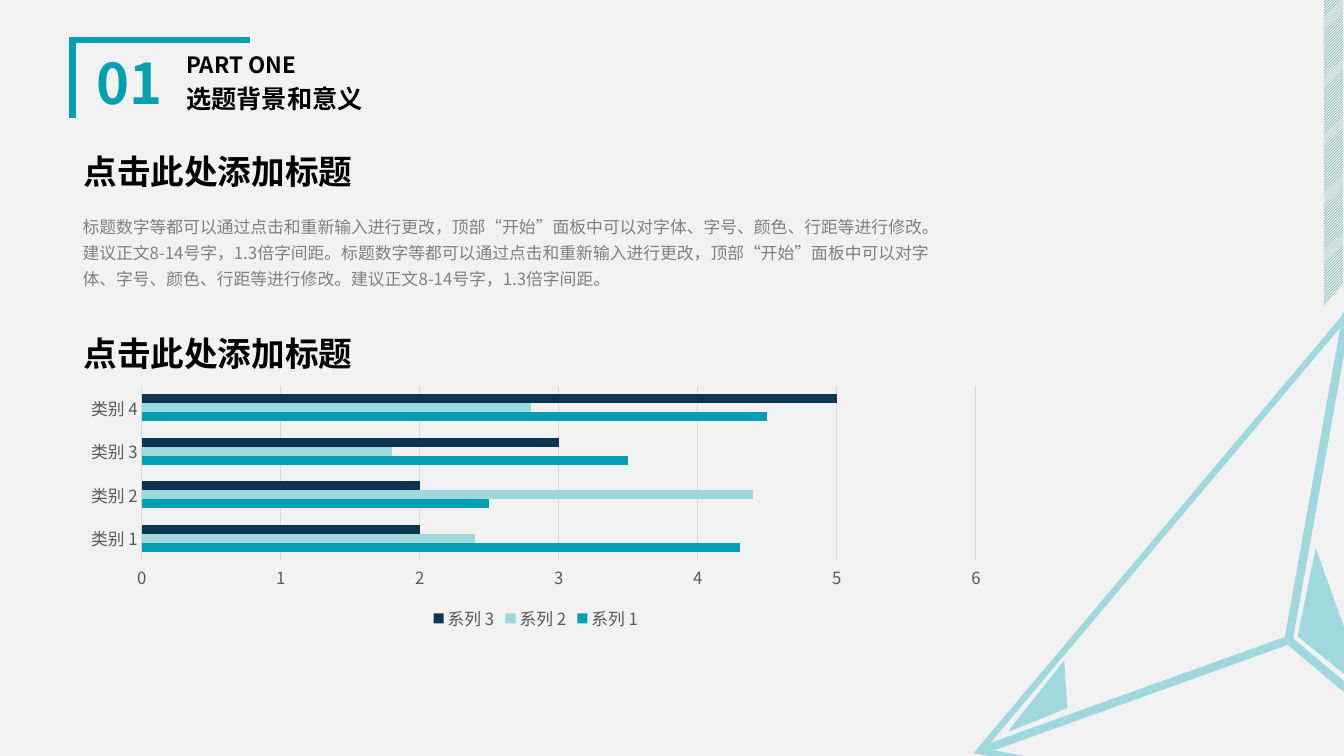
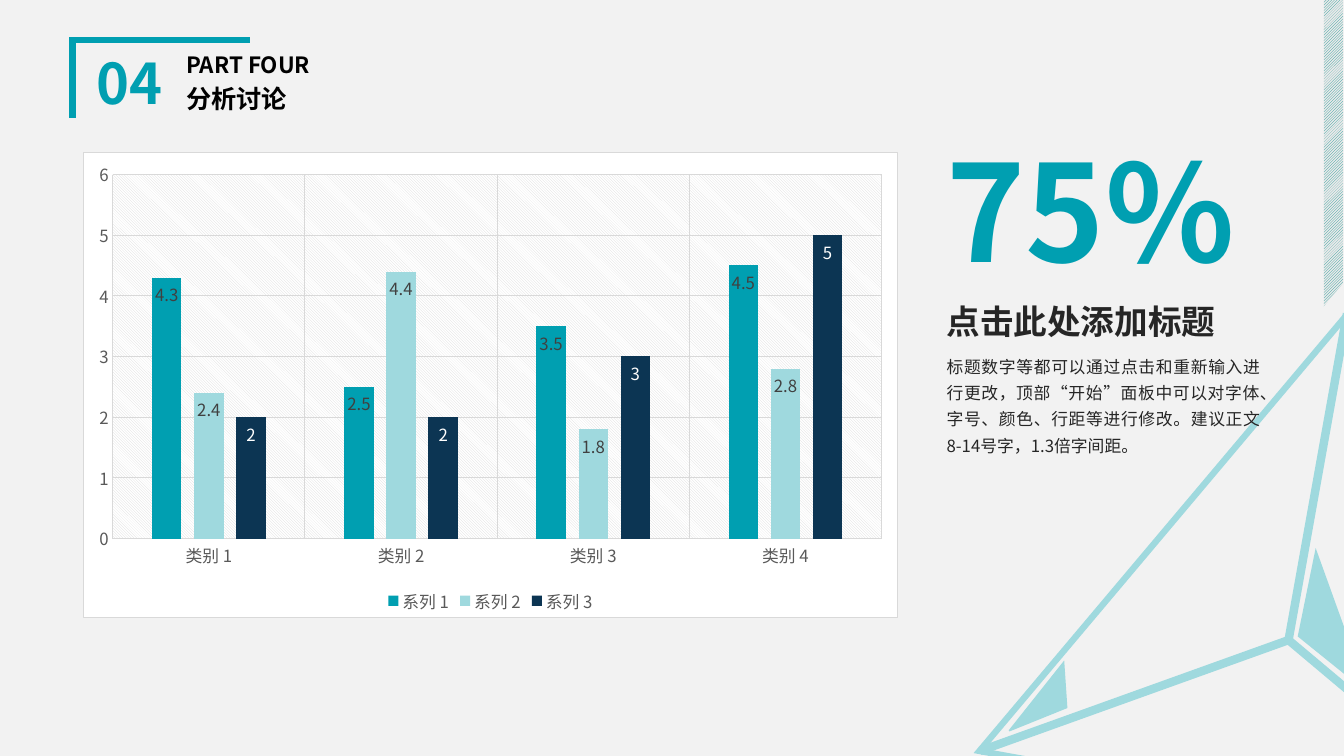
from lxml.etree import SubElement
from pptx import Presentation
from pptx.chart.data import CategoryChartData as Data
from pptx.dml.color import RGBColor
from pptx.dml.fill import FillFormat
from pptx.dml.line import LineFormat
from pptx.enum.chart import XL_CHART_TYPE as Kind
from pptx.enum.chart import XL_LABEL_POSITION as Spot
from pptx.enum.chart import XL_LEGEND_POSITION as Side
from pptx.enum.chart import XL_TICK_MARK as Tick
from pptx.enum.dml import MSO_PATTERN as Hatch
from pptx.enum.shapes import MSO_CONNECTOR as Link
from pptx.enum.shapes import MSO_SHAPE as Form
from pptx.enum.text import MSO_ANCHOR as Anchor
from pptx.enum.text import PP_ALIGN as Align
from pptx.oxml.ns import qn
from pptx.oxml.xmlchemy import OxmlElement
from pptx.util import Pt

PX = 9144
FACE = "Noto Sans CJK SC"
TEAL, PALE, NAVY = "009FB1", "9FD9DE", "0C3553"
PAPER, WHITE, BLACK, INK = "F2F2F2", "FFFFFF", "000000", "262626"
GREY, LABEL, TEXT, RULE = "808080", "404040", "595959", "D9D9D9"
TILT = 250.2
HEAD = "点击此处添加标题"
BODY = ("标题数字等都可以通过点击和重新输入进行更改，顶部“开始”面板中可以对"
        "字体、字号、颜色、行距等进行修改。建议正文8-14号字，1.3倍字间距。")
CATS = [f"类别 {n}" for n in range(1, 5)]
ROWS = [
    ("系列 1", (4.3, 2.5, 3.5, 4.5), TEAL, LABEL),
    ("系列 2", (2.4, 4.4, 1.8, 2.8), PALE, LABEL),
    ("系列 3", (2, 2, 3, 5), NAVY, WHITE),
]


def hue(code):
    """Turn a hex string into a colour."""
    return RGBColor.from_string(code)


def emu(*vals):
    """Turn px lengths into EMU."""
    return [v * PX for v in vals]


def put(obj, **vals):
    """Set each named value on the object."""
    for key, val in vals.items():
        setattr(obj, key, val)


def tint(fill, code):
    """Give a fill one solid colour, or none."""
    if code:
        fill.solid()
        fill.fore_color.rgb = hue(code)
    else:
        fill.background()


def weave(fill, kind, fore, back):
    """Give a fill a hatch of two colours."""
    fill.patterned()
    fill.pattern = kind
    fill.fore_color.rgb = hue(fore)
    fill.back_color.rgb = hue(back)


def stroke(line, code, width=0.75):
    """Give a line its colour and width."""
    tint(line.fill, code)
    if code:
        line.width = Pt(width)


def style(font, size, code, bold=False):
    """Give a font the shared face for both scripts."""
    put(font, name=FACE, size=Pt(size), bold=bold)
    font.color.rgb = hue(code)
    SubElement(font._rPr, qn("a:ea")).set("typeface", FACE)


class Deck:
    """Hold the style and the current slide."""

    def __init__(self):
        """Start a wide deck."""
        self.prs = Presentation()
        put(self.prs, slide_width=1333 * PX, slide_height=750 * PX)
        self.slide = None

    def page(self, num, part, name):
        """Add a slide with its frame and section title."""
        self.slide = self.prs.slides.add_slide(self.prs.slide_layouts[6])
        tint(self.slide.background.fill, PAPER)
        self.frame()
        mid = {"anchor": Anchor.MIDDLE, "bold": True, "gap": 0.9}
        self.text((82, 49, 93, 73), num, 40, TEAL, align=Align.CENTER, **mid)
        self.text((175, 49, 267, 34), part, 16, BLACK, **mid)
        self.text((175, 78, 267, 44), name, 18, BLACK, **mid)

    def frame(self):
        """Draw the hatched band, corner bracket and paper plane."""
        band = self.shape(Form.RECTANGLE, (1313, 0, 19, 750), None)
        weave(band.fill, Hatch.LIGHT_UPWARD_DIAGONAL, "1A9895", "E9E9E9")
        self.free([(72, 117), (72, 40), (248, 40)], None, TEAL, 4.5, False)
        peak = Form.ISOSCELES_TRIANGLE
        self.shape(peak, (865, 386, 653, 563), PAPER, turn=TILT)
        self.shape(peak, (918, 417, 568, 490), PAPER, PALE, 4.5, TILT)
        hub = (1278, 635)
        for tip in ((972, 745), (1529, 846), (1336, 311)):
            self.line(tip, hub, PALE, 6)
        self.shape(peak, (1235, 601, 148, 45), PALE, PALE, 1, TILT)
        self.free([(1058, 702), (1055, 657), (1001, 725)], PALE, PALE, 1)

    def paint(self, item, fill, edge, width):
        """Set fill, outline and sharp corners."""
        item.shadow.inherit = False
        tint(item.fill, fill)
        stroke(item.line, edge, width)
        if edge:
            SubElement(item.line._get_or_add_ln(), qn("a:miter")).set("lim", "800000")
        return item

    def shape(self, kind, box, fill, edge=None, width=1, turn=0):
        """Add a preset shape."""
        item = self.slide.shapes.add_shape(kind, *emu(*box))
        item.rotation = turn
        return self.paint(item, fill, edge, width)

    def free(self, pts, fill, edge, width, close=True):
        """Add an outline through the points."""
        pen = self.slide.shapes.build_freeform(*pts[0], scale=PX)
        pen.add_line_segments(pts[1:], close=close)
        return self.paint(pen.convert_to_shape(), fill, edge, width)

    def line(self, start, end, code, width):
        """Add a straight line."""
        item = self.slide.shapes.add_connector(Link.STRAIGHT, *emu(*start, *end))
        stroke(item.line, code, width)
        SubElement(item._element.spPr, qn("a:effectLst"))

    def text(self, box, words, size, code, bold=False, gap=None,
             align=Align.LEFT, anchor=Anchor.TOP, wrap=True):
        """Add a text box."""
        frame = self.slide.shapes.add_textbox(*emu(*box)).text_frame
        put(frame, word_wrap=wrap, vertical_anchor=anchor)
        para = frame.paragraphs[0]
        put(para, alignment=align, line_spacing=gap)
        run = para.add_run()
        run.text = words
        style(run.font, size, code, bold)

    def chart(self, kind, box, gap, lap, full=False):
        """Add a chart of the shared rows, full with panel and labels."""
        data = Data()
        data.categories = CATS
        for name, vals, *_ in ROWS:
            data.add_series(name, vals)
        chart = self.slide.shapes.add_chart(kind, *emu(*box), data).chart
        put(chart, has_title=False, has_legend=True)
        style(chart.font, 12, TEXT)
        put(chart.legend, position=Side.BOTTOM, include_in_layout=False)
        style(chart.legend.font, 12, TEXT)
        plot = chart.plots[0]
        put(plot, gap_width=gap, overlap=lap, vary_by_categories=False)
        cat, val = chart.category_axis, chart.value_axis
        put(val, minimum_scale=0, maximum_scale=6, major_unit=1)
        for axis, edge, grid in ((cat, RULE, full), (val, None, True)):
            put(axis, major_tick_mark=Tick.NONE, minor_tick_mark=Tick.NONE,
                has_major_gridlines=grid)
            style(axis.tick_labels.font, 12, TEXT)
            stroke(axis.format.line, edge)
            if grid:
                stroke(axis.major_gridlines.format.line, RULE)
        for bars, (*_, code, ink) in zip(plot.series, ROWS):
            tint(bars.format.fill, code)
            if full:
                tags = bars.data_labels
                put(tags, show_value=True, position=Spot.INSIDE_END)
                style(tags.font, 12, ink)
        if full:
            self.panel(chart)

    def panel(self, chart):
        """Give a chart a white panel and a hatched plot."""
        root = chart._chartSpace
        back, area = OxmlElement("c:spPr"), OxmlElement("c:spPr")
        root.find(qn("c:txPr")).addprevious(back)
        root.find(".//" + qn("c:plotArea")).append(area)
        tint(FillFormat.from_fill_parent(back), WHITE)
        stroke(LineFormat(back), RULE)
        weave(FillFormat.from_fill_parent(area), Hatch.LIGHT_DOWNWARD_DIAGONAL,
              RULE, WHITE)
        stroke(LineFormat(area), None)


def main():
    """Build both slides and save them."""
    deck = Deck()
    deck.page("01", "PART ONE", "选题背景和意义")
    for top in (145, 325):
        deck.text((73, top, 287, 50), HEAD, 24, BLACK, bold=True, wrap=False)
    deck.text((72, 204, 865, 88), BODY * 2, 12, GREY, gap=1.3)
    deck.chart(Kind.BAR_CLUSTERED, (72, 378, 919, 252), 182, 1)

    deck.page("04", "PART FOUR", "分析讨论")
    deck.text((929, 122, 309, 170), "75%", 96, TEAL, bold=True, wrap=False)
    deck.text((929, 294, 316, 50), HEAD, 24, INK, bold=True)
    deck.text((929, 343, 331, 114), BODY, 12, INK, gap=1.3, align=Align.JUSTIFY)
    deck.chart(Kind.COLUMN_CLUSTERED, (82, 151, 809, 462), 267, -43, full=True)
    deck.prs.save("out.pptx")


if __name__ == "__main__":
    main()
